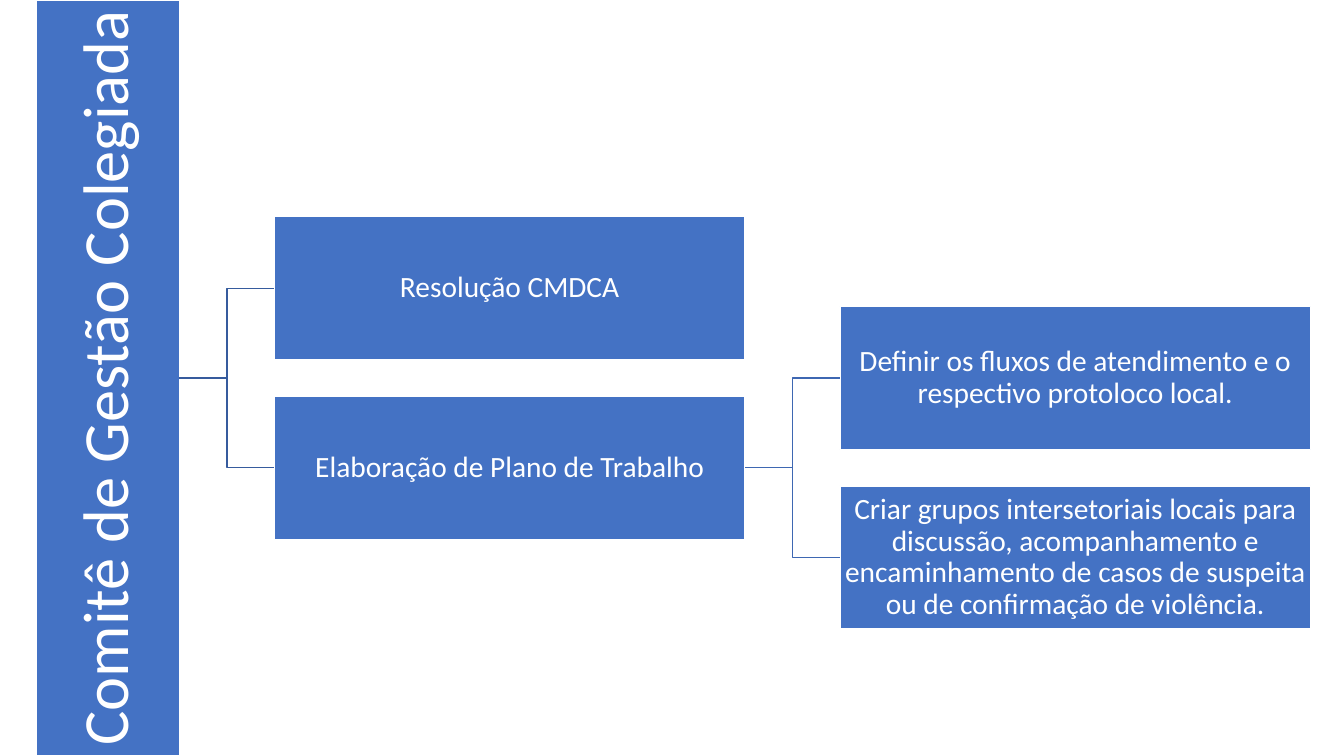
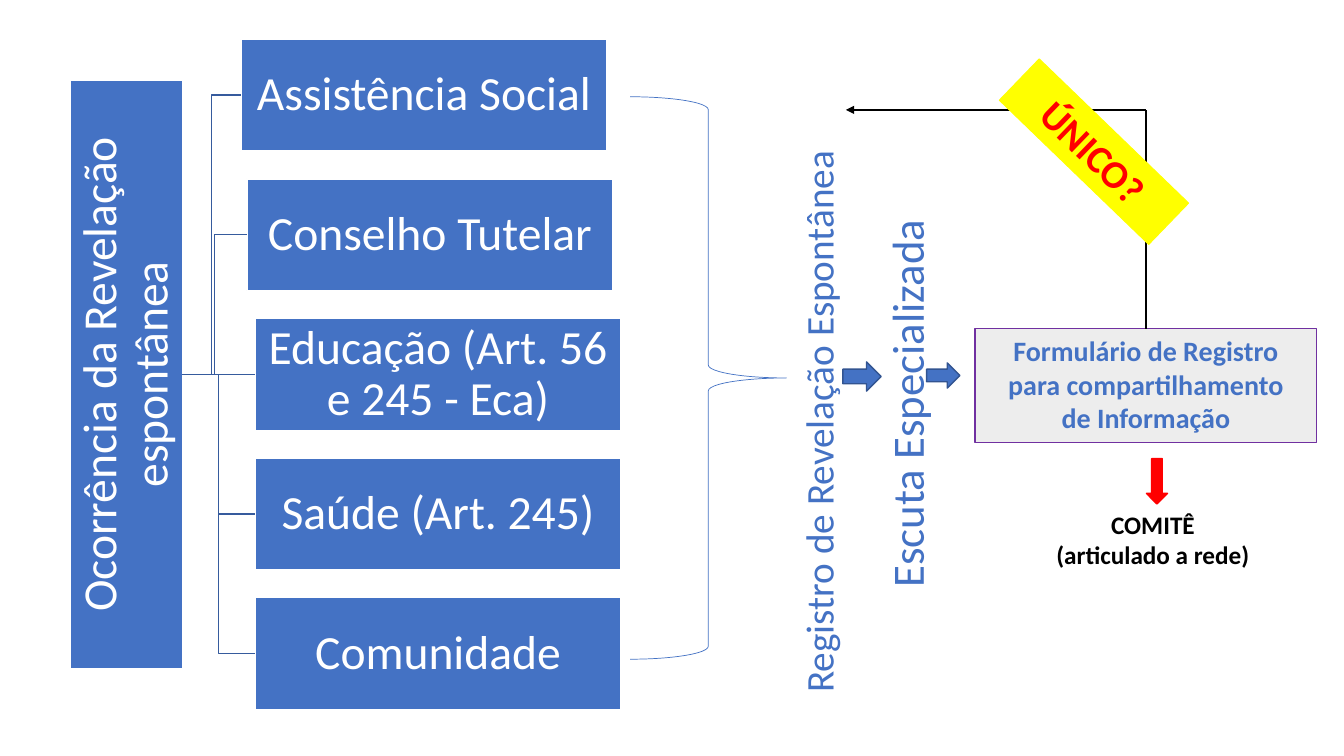
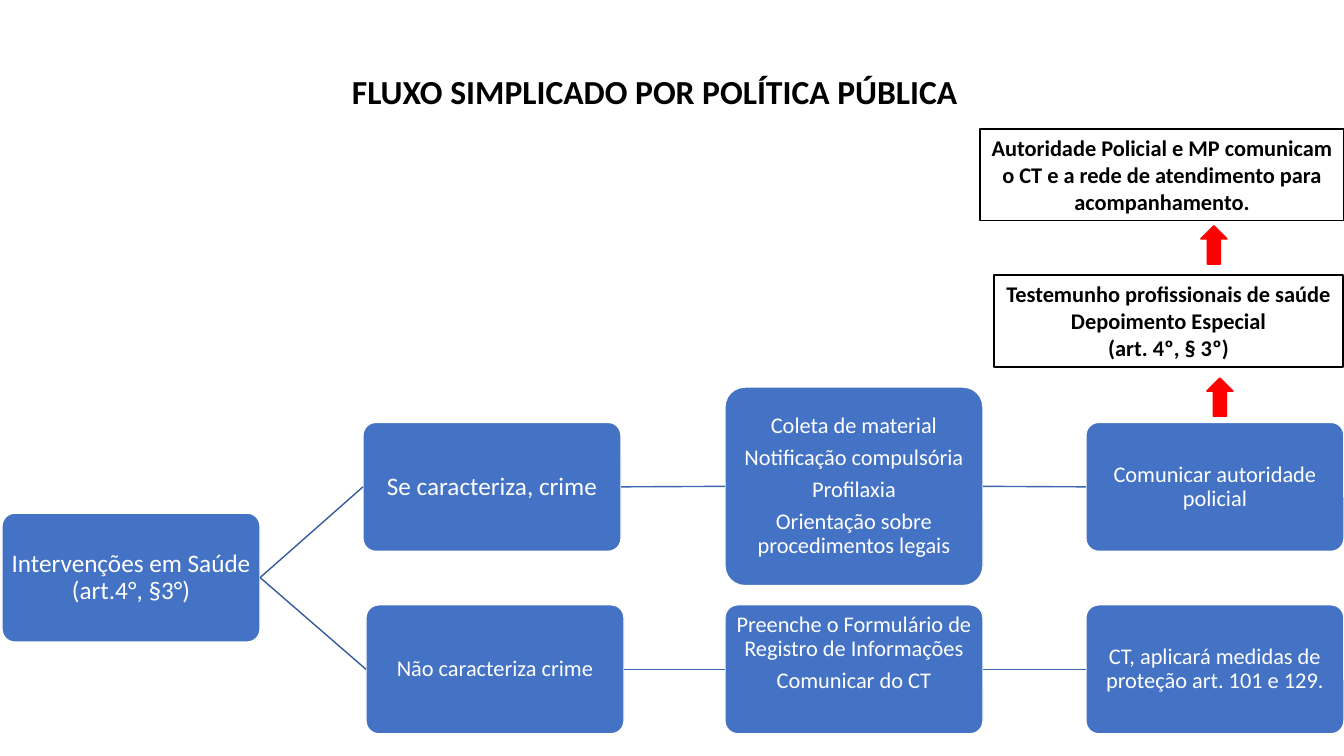
from dataclasses import dataclass
from typing import Optional

from pptx import Presentation
from pptx.dml.color import RGBColor
from pptx.enum.shapes import MSO_CONNECTOR as Link, MSO_SHAPE as Preset
from pptx.enum.text import MSO_ANCHOR as Anchor, MSO_AUTO_SIZE as AutoSize, PP_ALIGN as Align
from pptx.oxml import parse_xml
from pptx.oxml.ns import nsdecls, qn
from pptx.util import Inches, Pt


@dataclass(frozen=True)
class Theme:
    font: str = "Calibri"
    blue: str = "4472C4"
    blue_edge: str = "325491"
    branch: str = "365B9D"
    sub_branch: str = "3E67B2"
    white: str = "FFFFFF"
    black: str = "000000"
    red: str = "FF0000"
    yellow: str = "FFFF00"
    grey: str = "EDEDED"
    purple: str = "7030A0"
    banner: int = 46
    stage: int = 34
    process: int = 32
    record: int = 28
    title: int = 24
    task: int = 21
    form: int = 20
    heading: int = 18
    note: int = 16


THEME = Theme()
RIGHT, LEFT, TOP = 3, 1, 0


@dataclass(frozen=True)
class Area:
    left: float
    top: float
    width: float
    height: float

    def lengths(self) -> tuple:
        return tuple(Inches(v) for v in (self.left, self.top, self.width, self.height))


@dataclass(frozen=True)
class Style:
    size: int
    color: str = THEME.white
    bold: bool = False
    align: Align = Align.CENTER
    anchor: Anchor = Anchor.MIDDLE
    spacing: float = 1.0
    after: float = 0
    margin: Optional[float] = None
    extra_bottom: float = 0
    upward: bool = False
    wrap: bool = True


@dataclass(frozen=True)
class Paint:
    fill: Optional[str]
    line: str
    width: float = 1


@dataclass(frozen=True)
class Node:
    area: Area
    lines: tuple
    size: int
    upward: bool = False
    extra_bottom: float = 0


@dataclass(frozen=True)
class Arrow:
    preset: Preset
    area: Area
    paint: Paint


NODE_PAINT = Paint(THEME.blue, THEME.white)
BLUE_ARROW = Paint(THEME.blue, THEME.blue_edge)
RED_ARROW = Paint(THEME.red, THEME.red)


def rgb(value: str) -> RGBColor:
    return RGBColor.from_string(value)


def write(shape, lines: tuple, style: Style) -> None:
    frame = shape.text_frame
    frame.auto_size = AutoSize.NONE
    frame.word_wrap = style.wrap
    frame.vertical_anchor = style.anchor
    if style.margin is not None:
        frame.margin_left = frame.margin_right = frame.margin_top = Inches(style.margin)
        frame.margin_bottom = Inches(style.margin + style.extra_bottom)
    if style.upward:
        frame._txBody.bodyPr.set("vert", "vert270")
    for index, line in enumerate(lines):
        paragraph = frame.paragraphs[0] if index == 0 else frame.add_paragraph()
        paragraph.alignment = style.align
        paragraph.line_spacing = style.spacing
        paragraph.space_before = Pt(0)
        paragraph.space_after = Pt(style.after if index < len(lines) - 1 else 0)
        run = paragraph.add_run()
        run.text = line
        run.font.name = THEME.font
        run.font.size = Pt(style.size)
        run.font.bold = style.bold
        run.font.color.rgb = rgb(style.color)


def draw(slide, preset: Preset, area: Area, paint: Paint):
    shape = slide.shapes.add_shape(preset, *area.lengths())
    shape.shadow.inherit = False
    if paint.fill:
        shape.fill.solid()
        shape.fill.fore_color.rgb = rgb(paint.fill)
    else:
        shape.fill.background()
    shape.line.color.rgb = rgb(paint.line)
    shape.line.width = Pt(paint.width)
    return shape


def draw_arrow(slide, arrow: Arrow) -> None:
    draw(slide, arrow.preset, arrow.area, arrow.paint)


def draw_node(slide, node: Node, preset: Preset = Preset.RECTANGLE):
    shape = draw(slide, preset, node.area, NODE_PAINT)
    if preset == Preset.ROUNDED_RECTANGLE:
        shape.adjustments[0] = 0.1
    write(shape, node.lines, Style(node.size, spacing=0.9, after=0.35 * node.size, margin=0.01,
                                   extra_bottom=node.extra_bottom, upward=node.upward))
    return shape


def label(slide, area: Area, lines: tuple, style: Style) -> None:
    write(slide.shapes.add_textbox(*area.lengths()), lines, style)


def finish(line, color: str, width: float = 1, arrow: bool = False) -> None:
    line.line.color.rgb = rgb(color)
    line.line.width = Pt(width)
    properties = line._element.spPr
    if arrow:
        properties.find(qn("a:ln")).append(parse_xml(f'<a:tailEnd {nsdecls("a")} type="triangle"/>'))
    properties.append(parse_xml(f'<a:effectLst {nsdecls("a")}/>'))


def join(slide, parent, child, color: str, kind: Link = Link.STRAIGHT) -> None:
    line = slide.shapes.add_connector(kind, 0, 0, 0, 0)
    line.begin_connect(parent, RIGHT)
    line.end_connect(child, LEFT)
    finish(line, color)


def committee_slide(deck) -> None:
    slide = deck.slides.add_slide(deck.slide_layouts[6])

    def task(left: float, top: float, text: str):
        return draw_node(slide, Node(Area(left, top, 4.67, 1.42), (text,), THEME.task))

    committee = draw_node(slide, Node(Area(0.36, 0, 1.42, 7.5), ("Comitê de Gestão Colegiada",),
                                      THEME.banner, upward=True))
    resolution = task(2.72, 2.15, "Resolução CMDCA")
    plan = task(2.72, 3.93, "Elaboração de Plano de Trabalho")
    flows = task(8.33, 3.04, "Definir os fluxos de atendimento e o respectivo protoloco local.")
    groups = task(8.33, 4.82, "Criar grupos intersetoriais locais para discussão, acompanhamento e "
                              "encaminhamento de casos de suspeita ou de confirmação de violência.")
    for parent, child, color in ((committee, resolution, THEME.branch), (committee, plan, THEME.branch),
                                 (plan, flows, THEME.sub_branch), (plan, groups, THEME.sub_branch)):
        join(slide, parent, child, color, Link.ELBOW)


def disclosure_slide(deck) -> None:
    slide = deck.slides.add_slide(deck.slide_layouts[6])
    disclosure = draw_node(slide, Node(Area(0.7, 0.8, 1.11, 5.83), ("Ocorrência da Revelação espontânea",),
                                       THEME.stage, upward=True))
    services = (
        (2.39, "Assistência Social"),
        (2.45, "Conselho Tutelar"),
        (2.53, "Educação (Art. 56 e 245 - Eca)"),
        (2.53, "Saúde (Art. 245)"),
        (2.53, "Comunidade"),
    )
    middle = len(services) // 2
    for row, (left, text) in enumerate(services):
        area = Area(left, 3.16 + 1.385 * (row - middle), 3.63, 1.11)
        service = draw_node(slide, Node(area, (text,), THEME.stage))
        join(slide, disclosure, service, THEME.branch, Link.STRAIGHT if row == middle else Link.ELBOW)

    brace = draw(slide, Preset.RIGHT_BRACE, Area(6.25, 0.96, 1.55, 5.58), Paint(None, THEME.blue, 0.5))
    brace.adjustments[0] = 0.083
    brace.adjustments[1] = 0.5

    for area, text, size in (
        (Area(7.83, 0, 0.57, 6.97), "Registro de Revelação Espontânea", THEME.record),
        (Area(8.67, 1.98, 0.64, 3.95), "Escuta Especializada", THEME.process),
    ):
        label(slide, area, (text,), Style(size, THEME.blue, align=Align.LEFT, anchor=Anchor.TOP, upward=True))

    form = draw(slide, Preset.RECTANGLE, Area(9.67, 3.26, 3.39, 1.13), Paint(THEME.grey, THEME.purple, 0.75))
    write(form, ("Formulário de Registro para compartilhamento", "de Informação"),
          Style(THEME.form, THEME.blue, bold=True, anchor=Anchor.TOP))

    corner = Inches(11.365), Inches(1.09)
    rise = slide.shapes.add_connector(Link.STRAIGHT, *corner, *corner)
    rise.begin_connect(form, TOP)
    finish(rise, THEME.black, 1.5)
    back = slide.shapes.add_connector(Link.STRAIGHT, *corner, Inches(8.39), corner[1])
    finish(back, THEME.black, 1.5, arrow=True)

    single = draw(slide, Preset.RECTANGLE, Area(9.82, 1.22, 2.06, 0.57), Paint(THEME.yellow, THEME.yellow, 0.75))
    single.rotation = 44
    write(single, ("ÚNICO?",), Style(THEME.record, THEME.red, bold=True, anchor=Anchor.TOP))

    label(slide, Area(10.35, 5, 2.17, 0.71), ("COMITÊ (articulado a rede)",),
          Style(THEME.heading, THEME.black, bold=True, anchor=Anchor.TOP))
    for arrow in (
        Arrow(Preset.RIGHT_ARROW, Area(8.36, 3.59, 0.38, 0.29), BLUE_ARROW),
        Arrow(Preset.RIGHT_ARROW, Area(9.19, 3.6, 0.33, 0.25), BLUE_ARROW),
        Arrow(Preset.DOWN_ARROW, Area(11.37, 4.55, 0.21, 0.45), RED_ARROW),
    ):
        draw_arrow(slide, arrow)


def policy_slide(deck) -> None:
    slide = deck.slides.add_slide(deck.slide_layouts[5])
    title = slide.shapes.title
    title.left, title.top, title.width, title.height = Area(3.39, 0.65, 6.4, 0.5).lengths()
    write(title, ("FLUXO SIMPLICADO POR POLÍTICA PÚBLICA",),
          Style(THEME.title, THEME.black, bold=True, align=Align.LEFT, anchor=Anchor.TOP))

    def step(left: float, top: float, lines: tuple, size: int = THEME.note,
             height: float = 1.28, extra_bottom: float = 0):
        node = Node(Area(left, top, 2.56, height), lines, size, extra_bottom=extra_bottom)
        return draw_node(slide, node, Preset.ROUNDED_RECTANGLE)

    crime_top, no_crime_top = 4.19, 6
    care_left, case_left, action_left, outcome_left = 0.02, 3.6, 7.19, 10.77
    health = step(care_left, 5.09, ("Intervenções em Saúde (art.4°, §3°)",), THEME.heading)
    crime_path = (
        health,
        step(case_left, crime_top, ("Se caracteriza, crime",), THEME.heading),
        step(action_left, 3.84, ("Coleta de material", "Notificação compulsória", "Profilaxia",
                                 "Orientação sobre procedimentos legais"), height=1.97),
        step(outcome_left, crime_top, ("Comunicar autoridade policial",)),
    )
    no_crime_path = (
        health,
        step(case_left + 0.03, no_crime_top, ("Não caracteriza crime",)),
        step(action_left, no_crime_top, ("Preenche o Formulário de Registro de Informações", "Comunicar do CT"),
             extra_bottom=0.32),
        step(outcome_left, no_crime_top, ("CT, aplicará medidas de proteção art. 101 e 129.",)),
    )
    for steps in (crime_path, no_crime_path):
        for parent, child in zip(steps, steps[1:]):
            join(slide, parent, child, THEME.branch if parent is health else THEME.sub_branch)

    for area, lines in (
        (Area(9.86, 2.73, 3.46, 0.91),
         ("Testemunho profissionais de saúde", "Depoimento Especial", "(art. 4º, § 3º)")),
        (Area(9.72, 1.28, 3.61, 0.91),
         ("Autoridade Policial e MP comunicam", "o CT e a rede de atendimento para", "acompanhamento.")),
    ):
        notice = draw(slide, Preset.RECTANGLE, area, Paint(THEME.white, THEME.black))
        write(notice, lines, Style(THEME.note, THEME.black, bold=True, anchor=Anchor.TOP, wrap=False))
    for left, top in ((11.97, 3.75), (11.91, 2.24)):
        draw_arrow(slide, Arrow(Preset.UP_ARROW, Area(left, top, 0.26, 0.38), RED_ARROW))


def main() -> None:
    deck = Presentation()
    deck.slide_width, deck.slide_height = Inches(13.33), Inches(7.5)
    committee_slide(deck)
    disclosure_slide(deck)
    policy_slide(deck)
    deck.save("out.pptx")


if __name__ == "__main__":
    main()
